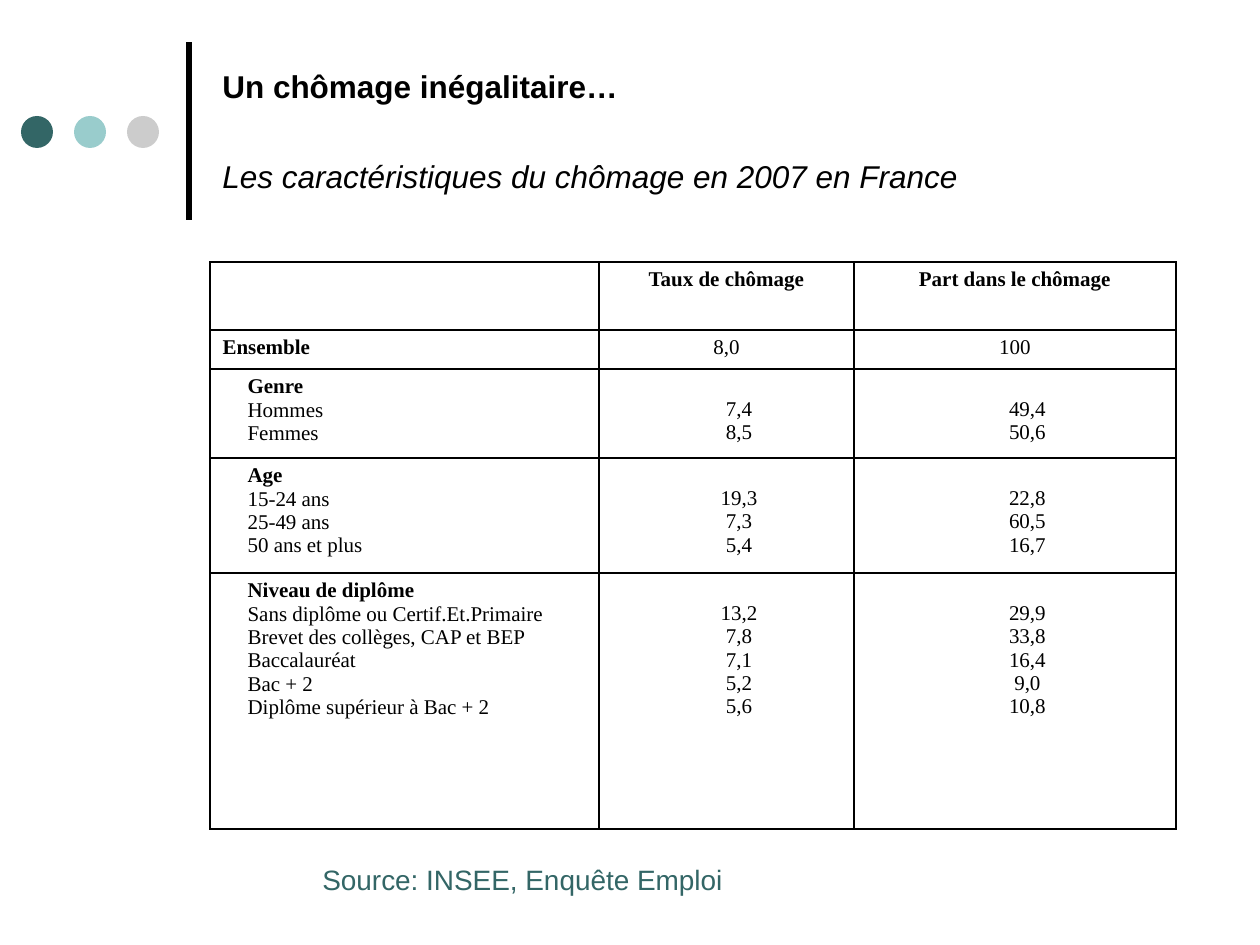
import pptx
import pptx.dml.color
import pptx.enum.shapes
import pptx.enum.text
import pptx.oxml.ns
import pptx.util
from lxml import etree

PX = 914400 // 126
BLACK = pptx.dml.color.RGBColor(0x00, 0x00, 0x00)
TEAL = pptx.dml.color.RGBColor(0x33, 0x66, 0x66)
AQUA = pptx.dml.color.RGBColor(0x99, 0xCC, 0xCC)
GREY = pptx.dml.color.RGBColor(0xCC, 0xCC, 0xCC)
ALIGN = pptx.enum.text.PP_ALIGN
ANCHOR = pptx.enum.text.MSO_ANCHOR
qn = pptx.oxml.ns.qn

COLUMNS = [389, 255, 322]
# Each row: height, first-line offset, space above the values, one text list per column
ROWS = [
    (68, -48, 0, [[], ["Taux de chômage"], ["Part dans le chômage"]]),
    (39, -48, 0, [["Ensemble"], ["8,0"], ["100"]]),
    (89, -23, 23, [["Genre", "Hommes", "Femmes"], ["7,4", "8,5"], ["49,4", "50,6"]]),
    (115, -23, 23, [["Age", "15-24 ans", "25-49 ans", "50 ans et plus"],
                    ["19,3", "7,3", "5,4"], ["22,8", "60,5", "16,7"]]),
    (256, -23, 23, [["Niveau de diplôme", "Sans diplôme ou Certif.Et.Primaire",
                     "Brevet des collèges, CAP et BEP", "Baccalauréat", "Bac + 2",
                     "Diplôme supérieur à Bac + 2"],
                    ["13,2", "7,8", "7,1", "5,2", "5,6"],
                    ["29,9", "33,8", "16,4", "9,0", "10,8"]]),
]


def emu(*lengths):
    return [length * PX for length in lengths]


class SlideBuilder:
    heading = {"name": "Arial", "size": pptx.util.Pt(18)}
    source = {"name": "Arial", "size": pptx.util.Pt(16)}
    body = {"name": "Times New Roman", "size": pptx.util.Pt(12)}

    def __init__(self, slide):
        self.slide = slide

    def add_text(self, paragraph, text, style, color=BLACK, **extra):
        run = paragraph.add_run()
        run.text = text
        for key, value in {**style, **extra}.items():
            setattr(run.font, key, value)
        run.font.color.rgb = color

    def dot(self, left, top, size, color):
        shape = self.slide.shapes.add_shape(
            pptx.enum.shapes.MSO_SHAPE.OVAL, *emu(left, top, size, size))
        shape.shadow.inherit = False
        shape.fill.solid()
        shape.fill.fore_color.rgb = color
        shape.line.fill.background()

    def line(self, *ends):
        connector = self.slide.shapes.add_connector(
            pptx.enum.shapes.MSO_CONNECTOR.STRAIGHT, *emu(*ends))
        connector.line.color.rgb = BLACK
        connector.line.width = pptx.util.Pt(3)
        etree.SubElement(connector._element.spPr, qn("a:effectLst"))

    def text_box(self, box, **settings):
        frame = self.slide.shapes.add_textbox(*emu(*box)).text_frame
        for key, value in settings.items():
            setattr(frame, key, value)
        return frame

    def borders(self, cell):
        properties = cell._tc.get_or_add_tcPr()
        for side in ("a:lnL", "a:lnR", "a:lnT", "a:lnB"):
            border = etree.SubElement(properties, qn(side), w=str(pptx.util.Pt(1)))
            fill = etree.SubElement(border, qn("a:solidFill"))
            etree.SubElement(fill, qn("a:srgbClr"), val=str(BLACK))

    def cell(self, cell, lines, offset, bold_lines, align):
        self.borders(cell)
        cell.fill.background()
        frame = cell.text_frame
        for index, text in enumerate(lines):
            paragraph = frame.add_paragraph() if index else frame.paragraphs[0]
            paragraph.alignment = align
            properties = paragraph._p.get_or_add_pPr()
            properties.set("marL", str(48 * PX))
            properties.set("indent", str(offset * PX))
            self.add_text(paragraph, text, self.body, bold=index < bold_lines)

    def table(self, left, top):
        heights = [row[0] for row in ROWS]
        table = self.slide.shapes.add_table(
            len(ROWS), len(COLUMNS),
            *emu(left, top, sum(COLUMNS), sum(heights))).table
        table.first_row = table.horz_banding = False
        for column, width in zip(table.columns, COLUMNS):
            column.width = width * PX
        for row_index, (height, offset, space, texts) in enumerate(ROWS):
            table.rows[row_index].height = height * PX
            for column_index, lines in enumerate(texts):
                cell = table.cell(row_index, column_index)
                is_label = column_index == 0
                self.cell(cell, lines, offset, int(is_label or row_index == 0),
                          ALIGN.JUSTIFY if is_label else ALIGN.CENTER)
                if not is_label:
                    cell.margin_top = (6 + space) * PX


def main():
    presentation = pptx.Presentation()
    presentation.slide_width, presentation.slide_height = emu(1260, 945)
    builder = SlideBuilder(presentation.slides.add_slide(presentation.slide_layouts[6]))

    # Decoration
    builder.line(189, 220, 189, 42)
    for index, color in enumerate((TEAL, AQUA, GREY)):
        builder.dot(21 + 53 * index, 116, 32, color)

    # Title and subtitle
    title = builder.text_box((210, 26, 966, 210), word_wrap=True,
                             vertical_anchor=ANCHOR.MIDDLE)
    builder.add_text(title.paragraphs[0], "Un chômage inégalitaire…",
                     builder.heading, bold=True)
    subtitle = title.add_paragraph()
    subtitle.space_before = pptx.util.Pt(30)
    builder.add_text(subtitle, "Les caractéristiques du chômage en 2007 en France",
                     builder.heading, italic=True)

    # Unemployment table
    builder.table(210, 262)

    # Source
    source = builder.text_box((310, 856, 427, 47), word_wrap=False,
                              auto_size=pptx.enum.text.MSO_AUTO_SIZE.SHAPE_TO_FIT_TEXT)
    builder.add_text(source.paragraphs[0], "Source: INSEE, Enquête Emploi",
                     builder.source, TEAL)

    presentation.save("out.pptx")


if __name__ == "__main__":
    main()
